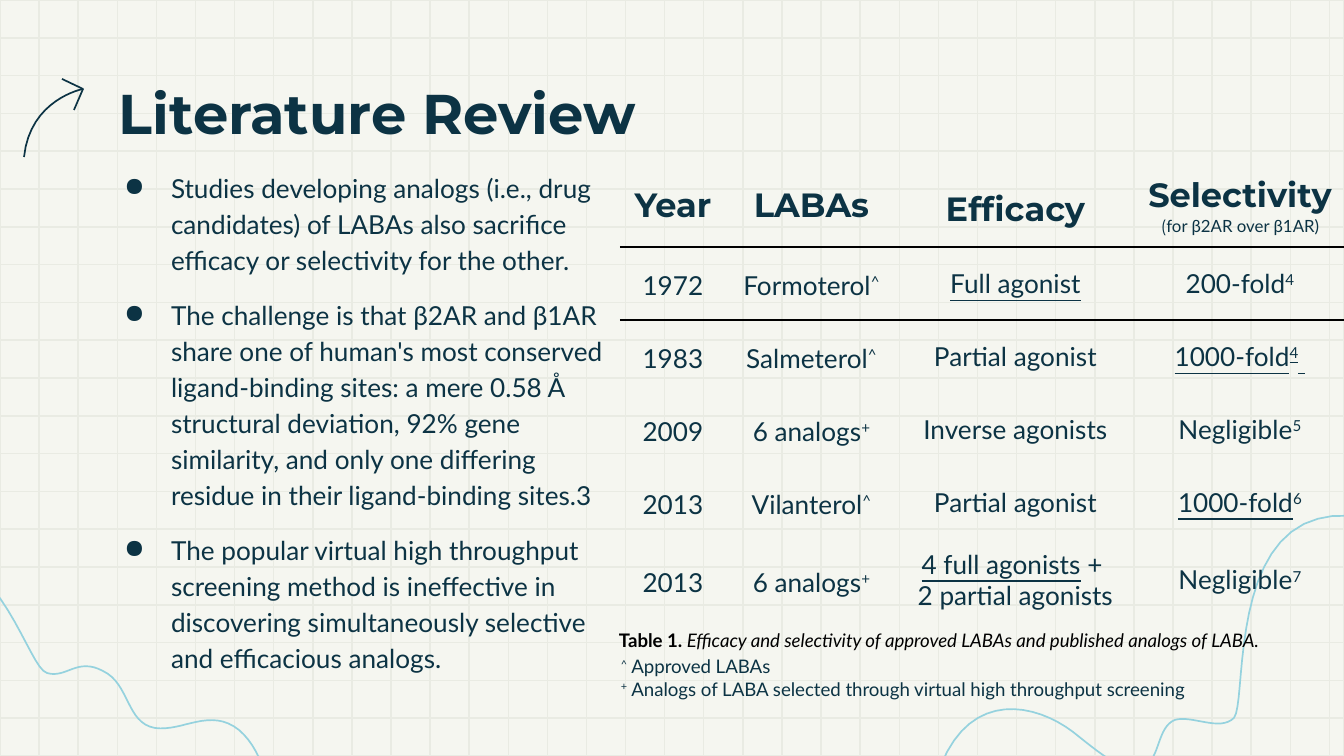
from lxml.etree import SubElement
from pptx import Presentation
from pptx.dml.color import RGBColor
from pptx.enum.shapes import MSO_CONNECTOR as Conn, MSO_SHAPE as Kind
from pptx.enum.text import MSO_ANCHOR as Anchor, PP_ALIGN as Align
from pptx.oxml.ns import qn
from pptx.util import Pt

UNIT = 914400 / 134.4
WIDE, HIGH = 1344, 756
ROWS, COLS, STEP = 20, 34, 39.1
INK, GRID, WAVE, PAPER, BLACK = "0C3344", "E9EBE3", "95D2DE", "F5F6F0", "000000"
PLAIN = "{2D5ABB26-0587-4C30-8999-92F81FD0307C}"

UP = {"base": 30000}
LINE = {"under": True}
NOTE = {"size": 9, "bold": False}

HEAD = [
    [["Year"]],
    [["LABAs"]],
    [["Efficacy"]],
    [["Selectivity "], [("(", NOTE), ("for β2AR over β1AR)", {**NOTE, "face": "Lato"})]],
]
BODY = [
    [[["1972"]], [["Formoterol", ("^", UP)]], [[("Full agonist", LINE)]], [["200-fold", ("4", UP)]]],
    [[["1983"]], [["Salmeterol", ("^", UP)]], [["Partial agonist"]],
     [[("1000-fold", LINE), ("4", {**UP, **LINE}), (" ", LINE)]]],
    [[["2009"]], [["6 analogs", ("+", UP)]], [["Inverse agonists"]], [["Negligible", ("5", UP)]]],
    [[["2013"]], [["Vilanterol", ("^", UP)]], [["Partial agonist"]], [[("1000-fold", LINE), ("6", UP)]]],
    [[["2013"]], [["6 analogs", ("+", UP)]],
     [[("4 full agonists", LINE), " + "], ["2 partial agonists"]], [["Negligible", ("7", UP)]]],
]
WIDTHS = [106, 171, 237, 212]
HEIGHTS = [82, 73, 73, 73, 73, 82]

POINTS = [
    ["Studies developing analogs (i.e., drug candidates) of LABAs also sacrifice efficacy or "
     "selectivity for the other."],
    ["The challenge is that β2AR and β1AR share one of human's most conserved ligand-binding "
     "sites: a mere 0.58 Å structural deviation, 92% gene similarity, and only one differing "
     "residue in their ligand-binding sites.3"],
    ["The popular virtual high throughput screening method is ineffective in discovering "
     "simultaneously selective and efficacious analogs."],
]
CAPTION = [[("Table 1. ", {"bold": True}),
            ("Efficacy and selectivity of approved LABAs and published analogs of LABA.",
             {"ital": True})]]
KEYS = [
    [("^", UP), " Approved LABAs"],
    [("+", UP), " Analogs of LABA selected through virtual high throughput screening"],
]

ARROW = [(83, 89), (83, 89), (30, 99), (24, 157)]
TIP = [(74, 110), (83, 89), (62, 79)]
WAVES = [
    [(1732, 569), (1732, 569), (1708, 530), (1671, 523), (1634, 517), (1624, 554), (1597, 564),
     (1570, 574), (1554, 538), (1524, 540), (1493, 543), (1496, 566), (1477, 571),
     (1458, 577), (1378, 489), (1304, 524), (1231, 560), (1246, 703), (1234, 718),
     (1220, 732), (1192, 715), (1175, 720), (1157, 727), (1160, 759), (1144, 767),
     (1128, 775), (1109, 761), (1073, 732), (1036, 704), (972, 689), (941, 765)],
    [(270, 800), (270, 800), (267, 754), (239, 730), (210, 707), (183, 732), (155, 728),
     (126, 723), (130, 684), (103, 671), (77, 657), (66, 679), (47, 673),
     (28, 668), (3, 552), (-78, 547), (-160, 540), (-218, 671), (-237, 677),
     (-255, 684), (-270, 655), (-289, 650), (-308, 648), (-321, 677), (-339, 676),
     (-358, 673), (-366, 652), (-383, 609), (-401, 567), (-449, 521), (-512, 571)],
]


def px(*nums):
    return [round(n * UNIT) for n in nums]


def tint(code):
    return RGBColor.from_string(code)


def style(run, size, face="Lato", color=INK, bold=False, ital=False, under=False, base=0):
    font = run.font
    font.size, font.name, font.color.rgb = Pt(size), face, tint(color)
    font.bold, font.italic, font.underline = bold, ital, under
    if base:
        run._r.get_or_add_rPr().set("baseline", str(base))


def write(frame, paras, align=Align.LEFT, gap=None, before=0, after=0, dot=False, **look):
    for i, runs in enumerate(paras):
        para = frame.paragraphs[0] if i == 0 else frame.add_paragraph()
        para.alignment, para.line_spacing = align, gap
        para.space_before, para.space_after = Pt(before), Pt(after)
        if dot:
            prop = para._p.get_or_add_pPr()
            left, hang = px(67, -47)
            prop.set("marL", str(left))
            prop.set("indent", str(hang))
            SubElement(SubElement(prop, qn("a:buClr")), qn("a:srgbClr"), val=INK)
            SubElement(prop, qn("a:buChar"), char="●")
        for item in runs:
            words, extra = (item, {}) if isinstance(item, str) else item
            run = para.add_run()
            run.text = words
            style(run, **{**look, **extra})


def box(spot, paras, side=13, **look):
    frame = shapes.add_textbox(*px(*spot)).text_frame
    frame.word_wrap = True
    frame.margin_left, frame.margin_right, frame.margin_top, frame.margin_bottom = px(side, side, 13, 13)
    write(frame, paras, **look)


def rule(*ends):
    line = shapes.add_connector(Conn.STRAIGHT, *px(*ends))
    line.line.color.rgb, line.line.width = tint(GRID), Pt(0.78)
    SubElement(line._element.spPr, qn("a:effectLst"))


def bend(nodes, steps=16):
    dots = [nodes[0]]
    for i in range(0, len(nodes) - 1, 3):
        for k in range(1, steps + 1):
            t = k / steps
            mix = ((1 - t) ** 3, 3 * t * (1 - t) ** 2, 3 * t * t * (1 - t), t ** 3)
            dots.append(tuple(sum(m * n[a] for m, n in zip(mix, nodes[i:i + 4])) for a in (0, 1)))
    return dots


def trace(dots, color):
    first, *rest = [tuple(px(*d)) for d in dots]
    pen = shapes.build_freeform(*first)
    pen.add_line_segments(rest, close=False)
    form = pen.convert_to_shape()
    form.shadow.inherit = False
    form.fill.background()
    form.line.color.rgb, form.line.width = tint(color), Pt(0.9)


def edge(cell, side):
    prop = cell._tc.get_or_add_tcPr()
    line = SubElement(prop, qn(side), w=str(Pt(0.75)))
    SubElement(SubElement(line, qn("a:solidFill")), qn("a:srgbClr"), val=BLACK)
    prop.insert(0, line)


deck = Presentation()
deck.slide_width, deck.slide_height = px(WIDE, HIGH)
slide = deck.slides.add_slide(deck.slide_layouts[6])
shapes = slide.shapes
slide.background.fill.solid()
slide.background.fill.fore_color.rgb = tint(PAPER)

frame = shapes.add_shape(Kind.RECTANGLE, *px(0, 0, WIDE, HIGH))
frame.shadow.inherit = False
frame.fill.background()
frame.line.color.rgb, frame.line.width = tint(GRID), Pt(0.78)
for i in range(1, ROWS):
    rule(0, i * HIGH / ROWS, WIDE, i * HIGH / ROWS)
for i in range(1, COLS + 1):
    rule(i * STEP, 0, i * STEP, HIGH)

trace(bend(ARROW), INK)
trace(TIP, INK)
for wave in WAVES:
    trace(bend(wave), WAVE)

box((106, 66, 1133, 85), [["Literature Review"]], size=30, face="Montserrat", bold=True)

grid = shapes.add_table(len(HEIGHTS), len(WIDTHS), *px(620, 165, sum(WIDTHS), sum(HEIGHTS))).table
grid.first_row = grid.horz_banding = False
grid._tbl.tblPr.find(qn("a:tableStyleId")).text = PLAIN
for col, size in zip(grid.columns, px(*WIDTHS)):
    col.width = size
for row, size in zip(grid.rows, px(*HEIGHTS)):
    row.height = size
for r, line in enumerate([HEAD] + BODY):
    for c, paras in enumerate(line):
        cell = grid.cell(r, c)
        cell.vertical_anchor = Anchor.MIDDLE
        cell.margin_left, cell.margin_right, cell.margin_top, cell.margin_bottom = px(13, 13, 9, 9)
        cell.fill.background()
        if r < 2:
            edge(cell, "a:lnT" if r else "a:lnB")
        look = {"size": 14} if r else {"size": 18, "face": "Montserrat", "bold": True}
        loose = c < 2 if r else c == 2
        write(cell.text_frame, paras, align=Align.CENTER, gap=1.15 if loose else None, **look)

box((621, 642, 769, 65), KEYS, side=0, size=10)
box((91, 155, 531, 591), POINTS, size=14, gap=1.15, before=10, dot=True)
box((619, 613, 747, 50), CAPTION, side=0, size=10, color=BLACK, gap=1.15, before=14, after=14)

deck.save("out.pptx")
